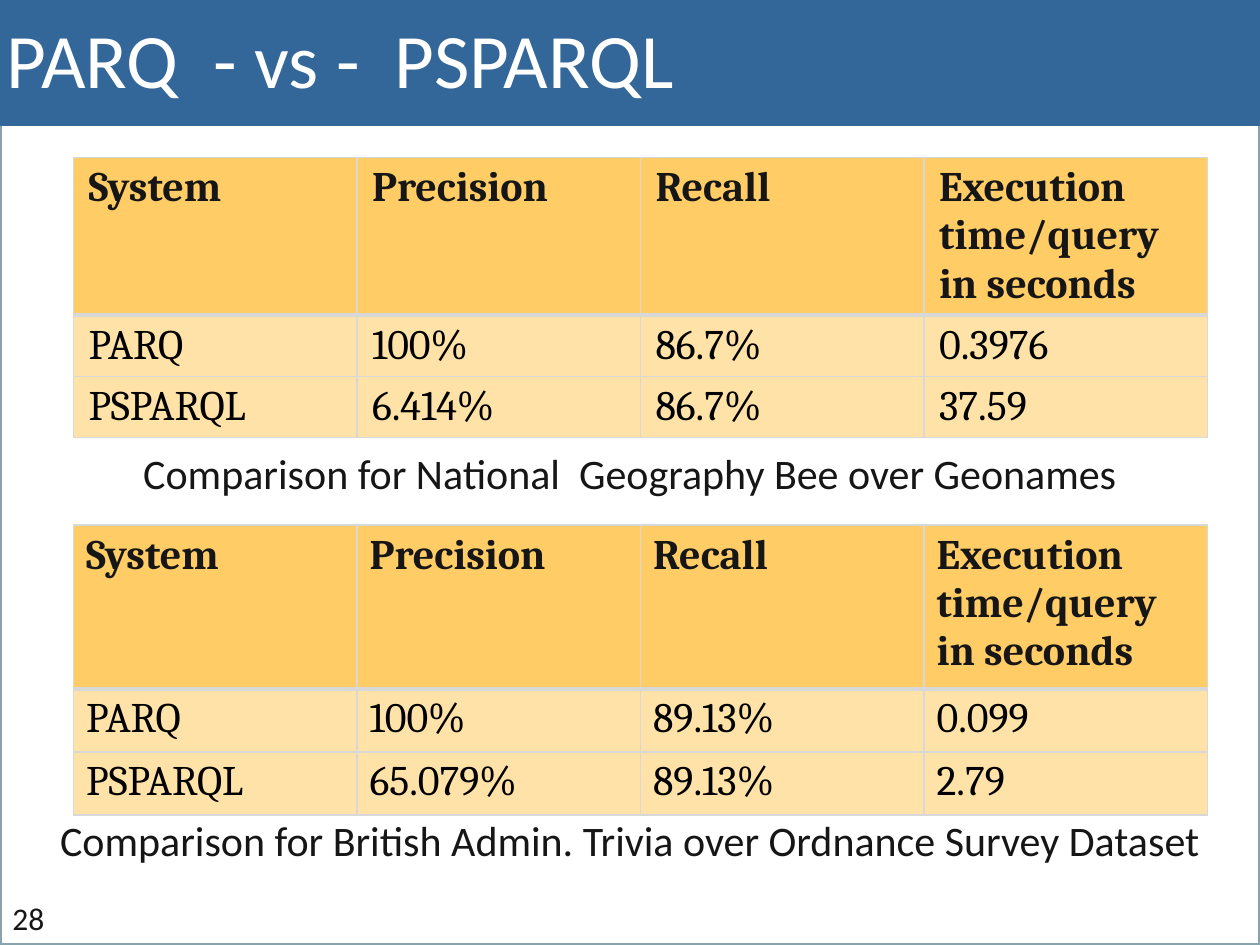
from dataclasses import dataclass

from lxml import etree
from pptx import Presentation
from pptx import util as u
from pptx.dml.color import RGBColor
from pptx.enum import shapes, text
from pptx.oxml import ns

Pt = u.Pt


@dataclass(frozen=True)
class Theme:
    sans: str = "Calibri"
    serif: str = "Cambria"
    ink: str = "161616"
    black: str = "000000"
    white: str = "FFFFFF"
    blue: str = "336699"
    edge: str = "87A3AC"
    grey: str = "D8D8D8"
    gold: str = "FFCC66"
    pale: str = "FFE2A7"
    head: int = 44
    body: int = 24
    small: int = 18


T = Theme()
WIDE, HIGH = 720, 540
HEADS = ["System", "Precision", "Recall", "Execution time/query in seconds"]


def rgb(code):
    return RGBColor.from_string(code)


def paint(fill, code):
    fill.solid()
    fill.fore_color.rgb = rgb(code)


def write(frame, words, size=T.body, font=T.sans, color=T.ink, bold=False,
          align=text.PP_ALIGN.LEFT):
    """Put one formatted paragraph into a text frame."""
    frame.word_wrap = True
    para = frame.paragraphs[0]
    para.alignment = align
    run = para.add_run()
    run.text = words
    run.font.size, run.font.name, run.font.bold = Pt(size), font, bold
    run.font.color.rgb = rgb(color)


def add_text(slide, words, left, top, width, height, **style):
    box = slide.shapes.add_textbox(Pt(left), Pt(top), Pt(width), Pt(height))
    write(box.text_frame, words, **style)


def add_frame(slide):
    """White page with a thin edge, behind the title."""
    page = slide.shapes.add_shape(shapes.MSO_SHAPE.RECTANGLE, 0, 0,
                                  Pt(WIDE), Pt(HIGH))
    page.shadow.inherit = False
    paint(page.fill, T.white)
    page.line.color.rgb = rgb(T.edge)
    page.line.width = Pt(2)
    slide.shapes.title.element.addprevious(page.element)


def add_title(slide, words):
    title = slide.shapes.title
    title.left, title.top, title.width, title.height = 0, 0, Pt(WIDE), Pt(72)
    paint(title.fill, T.blue)
    frame = title.text_frame
    frame.auto_size = text.MSO_AUTO_SIZE.NONE
    frame.vertical_anchor = text.MSO_ANCHOR.MIDDLE
    frame.margin_left, frame.margin_bottom = Pt(4), Pt(9.6)
    write(frame, words, size=T.head, color=T.white)


def set_edges(cell, **widths):
    """Cell borders, with the sides given in the order L, R, T, B."""
    props = cell._tc.get_or_add_tcPr()
    for spot, (side, width) in enumerate(widths.items()):
        line = etree.Element(ns.qn(f"a:ln{side}"), w=str(Pt(width)))
        fill = etree.SubElement(line, ns.qn("a:solidFill"))
        etree.SubElement(fill, ns.qn("a:srgbClr"), val=T.grey)
        props.insert(spot, line)


def add_grid(slide, rows, top, heights, inset):
    rows = [HEADS, *rows]
    table = slide.shapes.add_table(
        len(rows), len(HEADS), Pt(42), Pt(top), Pt(648), Pt(sum(heights))).table
    for row, height in zip(table.rows, heights):
        row.height = Pt(height)
    for i, row in enumerate(rows):
        head = i == 0
        for j, words in enumerate(row):
            cell = table.cell(i, j)
            cell.margin_left = cell.margin_right = Pt(inset)
            paint(cell.fill, T.gold if head else T.pale)
            set_edges(cell, L=1, R=1, T=3 if i == 1 else 1, B=3 if head else 1)
            write(cell.text_frame, words, font=T.serif, bold=head,
                  color=T.ink if head else T.black)


def main():
    deck = Presentation()
    deck.slide_width, deck.slide_height = Pt(WIDE), Pt(HIGH)
    slide = deck.slides.add_slide(deck.slide_layouts[5])
    paint(slide.background.fill, T.grey)
    add_frame(slide)
    add_title(slide, "PARQ  - vs -  PSPARQL")

    # First comparison
    mid = text.PP_ALIGN.CENTER
    add_grid(slide, [["PARQ", "100%", "86.7%", "0.3976"],
                     ["PSPARQL", "6.414%", "86.7%", "37.59"]],
             90, [90, 35, 35], 8.64)
    add_text(slide, "Comparison for National  Geography Bee over Geonames",
             0, 252, WIDE, 36, align=mid)

    # Second comparison
    add_grid(slide, [["PARQ", "100%", "89.13%", "0.099"],
                     ["PSPARQL", "65.079%", "89.13%", "2.79"]],
             300, [93.6, 36, 36], 7.2)
    add_text(slide,
             "Comparison for British Admin. Trivia over Ordnance Survey Dataset",
             0, 462, WIDE, 36, align=mid)

    # Page number
    add_text(slide, "28", 0, 510, 36, 30, size=T.small)
    deck.save("out.pptx")


if __name__ == "__main__":
    main()
